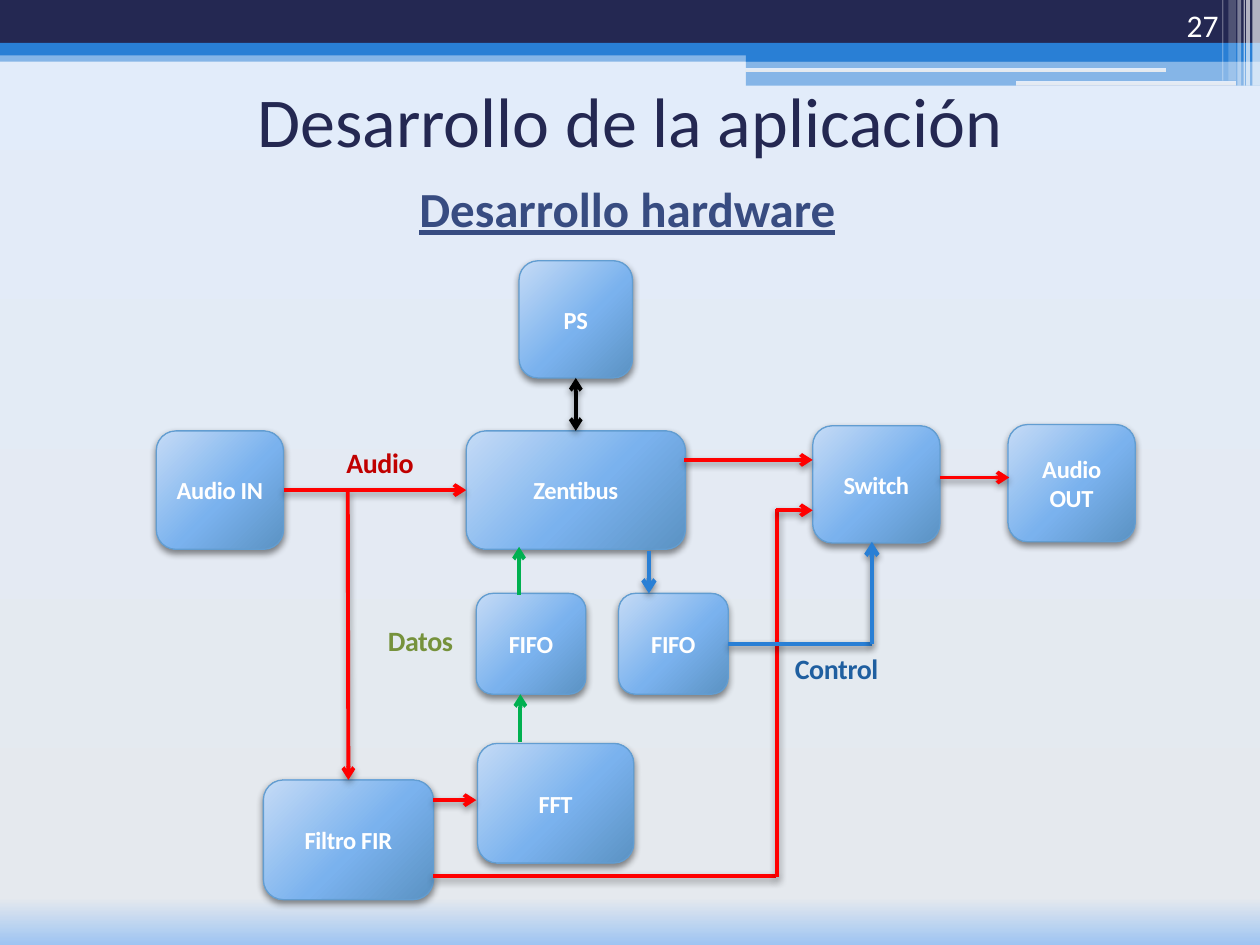
from lxml import etree
from pptx import Presentation
from pptx.dml.color import RGBColor
from pptx.enum.shapes import MSO_CONNECTOR, MSO_SHAPE
from pptx.enum.text import MSO_ANCHOR, MSO_AUTO_SIZE, PP_ALIGN
from pptx.oxml.ns import qn
from pptx.util import Inches, Pt

rgb = RGBColor.from_string


def set_gradient(fill, element, stops, shade, **attrs):
    fill.gradient()
    grad = next(element.iter(qn("a:gradFill")))
    for child in list(grad):
        grad.remove(child)
    gs_lst = etree.SubElement(grad, qn("a:gsLst"))
    for pos, color in stops:
        gs = etree.SubElement(gs_lst, qn("a:gs"), pos=str(pos * 1000))
        etree.SubElement(gs, qn("a:srgbClr"), val=color)
    return etree.SubElement(grad, qn("a:" + shade), **attrs)


def set_shadow(element, alpha, blur):
    effects = etree.SubElement(element.spPr, qn("a:effectLst"))
    if alpha:
        shadow = etree.SubElement(effects, qn("a:outerShdw"), blurRad=str(Pt(blur)),
                                  dist=str(Pt(2)), dir="5400000", rotWithShape="0")
        clr = etree.SubElement(shadow, qn("a:srgbClr"), val="000000")
        etree.SubElement(clr, qn("a:alpha"), val=str(alpha * 1000))


prs = Presentation()
prs.slide_width, prs.slide_height = Inches(10), Inches(7.5)
s = prs.slides.add_slide(prs.slide_layouts[6])

bg_stops = [(0, "9EC4F2"), (5, "E5E9EE"), (100, "E2ECFA")]
set_gradient(s.background.fill, s._element, bg_stops, "lin", ang="16200000", scaled="0")

bands = [
    (0, 0.4, 10, 0.09, "297FD5", 50),
    (0, 0, 10, 0.34, "242852", 100),
    (0, 0.34, 10, 0.1, "297FD5", 100),
    (5.92, 0.39, 4.08, 0.1, "297FD5", 100),
    (5.92, 0.48, 4.08, 0.2, "297FD5", 50),
    (5.91, 0.54, 3.35, 0.03, None, 100),
    (8.06, 0.64, 1.75, 0.04, None, 100),
    (9.94, 0, 0.06, 0.68, "FFFFFF", 65),
    (9.89, 0, 0.03, 0.68, "FFFFFF", 65),
    (9.87, 0, 0.01, 0.68, "FFFFFF", 60),
    (9.82, 0, 0.03, 0.68, "FFFFFF", 40),
    (9.75, 0, 0.06, 0.64, "FFFFFF", 20),
    (9.7, 0, 0.01, 0.64, "FFFFFF", 30),
]
for x, y, w, h, color, alpha in bands:
    kind = MSO_SHAPE.RECTANGLE if color else MSO_SHAPE.ROUNDED_RECTANGLE
    sp = s.shapes.add_shape(kind, Inches(x), Inches(y), Inches(w), Inches(h))
    sp.shadow.inherit = False
    sp.line.fill.background()
    if color:
        sp.fill.solid()
        sp.fill.fore_color.rgb = rgb(color)
        if alpha < 100:
            clr = next(sp._element.spPr.iter(qn("a:srgbClr")))
            etree.SubElement(clr, qn("a:alpha"), val=str(alpha * 1000))
    else:
        set_gradient(sp.fill, sp._element, bg_stops, "lin", ang="16200000", scaled="0")

node_stops = [(0, "C5DBF6"), (55, "7AB2EE"), (100, "5B92C3")]
boxes = [
    ("fifo_in", "FIFO", 3.78, 4.71, 0.87, 0.8),
    ("ps", "PS", 4.12, 2.07, 0.9, 0.93),
    ("audio_in", "Audio IN", 1.24, 3.42, 1.01, 0.94),
    ("switch", "Switch", 6.45, 3.38, 1.01, 0.93),
    ("audio_out", "Audio OUT", 8, 3.37, 1.01, 0.93),
    ("fir", "Filtro FIR", 2.09, 6.19, 1.35, 0.95),
    ("fft", "FFT", 3.79, 5.9, 1.24, 0.95),
    ("bridge", "Zentibus", 3.7, 3.42, 1.74, 0.94),
    ("fifo_out", "FIFO", 4.91, 4.71, 0.87, 0.8),
]
nodes = {}
for key, text, x, y, w, h in boxes:
    sp = s.shapes.add_shape(MSO_SHAPE.ROUNDED_RECTANGLE, Inches(x), Inches(y), Inches(w), Inches(h))
    path = set_gradient(sp.fill, sp._element, node_stops, "path", path="circle")
    etree.SubElement(path, qn("a:fillToRect"), l="-40000", t="-90000", r="140000", b="190000")
    sp.line.color.rgb = rgb("629DD1")
    sp.line.width = Pt(0.75)
    set_shadow(sp._element, 45, 4)
    tf = sp.text_frame
    tf.text = text
    tf.word_wrap = True
    tf.vertical_anchor = MSO_ANCHOR.MIDDLE
    p = tf.paragraphs[0]
    p.alignment = PP_ALIGN.CENTER
    p.space_before = p.space_after = Pt(6)
    r = p.runs[0]
    r.font.name, r.font.size, r.font.bold = "Calibri", Pt(14), True
    r.font.color.rgb = rgb("FFFFFF")
    r.font._element.set("spc", "-20")
    nodes[key] = sp

red, green, blue = "FF0000", "00B050", "297FD5"
lines = [
    (4.57, 3, 4.57, 3.42, "000000", "both", ("ps", 2), ("bridge", 0)),
    (2.25, 3.89, 3.7, 3.89, red, "end", ("audio_in", 3), ("bridge", 1)),
    (2.76, 3.9, 2.76, 6.19, red, "end", None, ("fir", 0)),
    (3.44, 6.35, 3.78, 6.35, red, "end", None, None),
    (4.13, 5.89, 4.13, 5.51, green, "end", None, None),
    (4.12, 4.72, 4.12, 4.34, green, "end", None, None),
    (5.15, 4.37, 5.15, 4.71, blue, "end", None, None),
    (3.44, 6.95, 6.16, 6.95, red, None, None, None),
    (6.17, 6.96, 6.17, 4.04, red, None, None, None),
    (6.16, 4.05, 6.45, 4.05, red, "end", None, None),
    (5.43, 3.65, 6.45, 3.65, red, "end", None, None),
    (5.78, 5.11, 6.92, 5.11, blue, None, ("fifo_out", 3), None),
    (6.92, 5.11, 6.92, 4.3, blue, "end", None, None),
    (7.46, 3.79, 8.01, 3.79, red, "end", None, None),
]
for x1, y1, x2, y2, color, arrows, begin, end in lines:
    cxn = s.shapes.add_connector(MSO_CONNECTOR.STRAIGHT, Inches(x1), Inches(y1), Inches(x2), Inches(y2))
    if begin:
        cxn.begin_connect(nodes[begin[0]], begin[1])
    if end:
        cxn.end_connect(nodes[end[0]], end[1])
    cxn.line.color.rgb = rgb(color)
    cxn.line.width = Pt(2.5 if color == blue else 2.25)
    ln = cxn.line._get_or_add_ln()
    if arrows == "both":
        etree.SubElement(ln, qn("a:headEnd"), type="arrow")
    if arrows:
        etree.SubElement(ln, qn("a:tailEnd"), type="arrow")
    set_shadow(cxn._element, {green: 0, blue: 45}.get(color, 40), 4)

texts = [
    ("Desarrollo de la aplicación", 0.5, 0.36, 9, 1.17, 40, "242852", PP_ALIGN.CENTER, MSO_ANCHOR.MIDDLE),
    ("27", 8.94, 0, 0.83, 0.4, 18, "FFFFFF", PP_ALIGN.RIGHT, MSO_ANCHOR.BOTTOM),
    ("Desarrollo hardware", 3.23, 1.37, 3.54, 0.57, 28, "384C81", PP_ALIGN.LEFT, MSO_ANCHOR.TOP),
    ("Control", 6.21, 5.12, 1.17, 0.55, 16, "1F5FA0", PP_ALIGN.JUSTIFY, MSO_ANCHOR.TOP),
    ("Datos", 2.98, 4.9, 1.17, 0.55, 16, "76923C", PP_ALIGN.JUSTIFY, MSO_ANCHOR.TOP),
    ("Audio", 2.65, 3.49, 1.17, 0.55, 16, "C00000", PP_ALIGN.JUSTIFY, MSO_ANCHOR.TOP),
]
for text, x, y, w, h, size, color, align, anchor in texts:
    tf = s.shapes.add_textbox(Inches(x), Inches(y), Inches(w), Inches(h)).text_frame
    tf.text = text
    tf.word_wrap = size != 28
    tf.vertical_anchor = anchor
    p = tf.paragraphs[0]
    p.alignment = align
    r = p.runs[0]
    r.font.name, r.font.size = "Calibri", Pt(size)
    r.font.color.rgb = rgb(color)
    r.font.bold = size in (16, 28)
    if size == 28:
        tf.auto_size = MSO_AUTO_SIZE.SHAPE_TO_FIT_TEXT
        r.font.underline = True
    if size == 16:
        p.space_before = p.space_after = Pt(6)
        r.font._element.set("spc", "-20")

prs.save("out.pptx")
